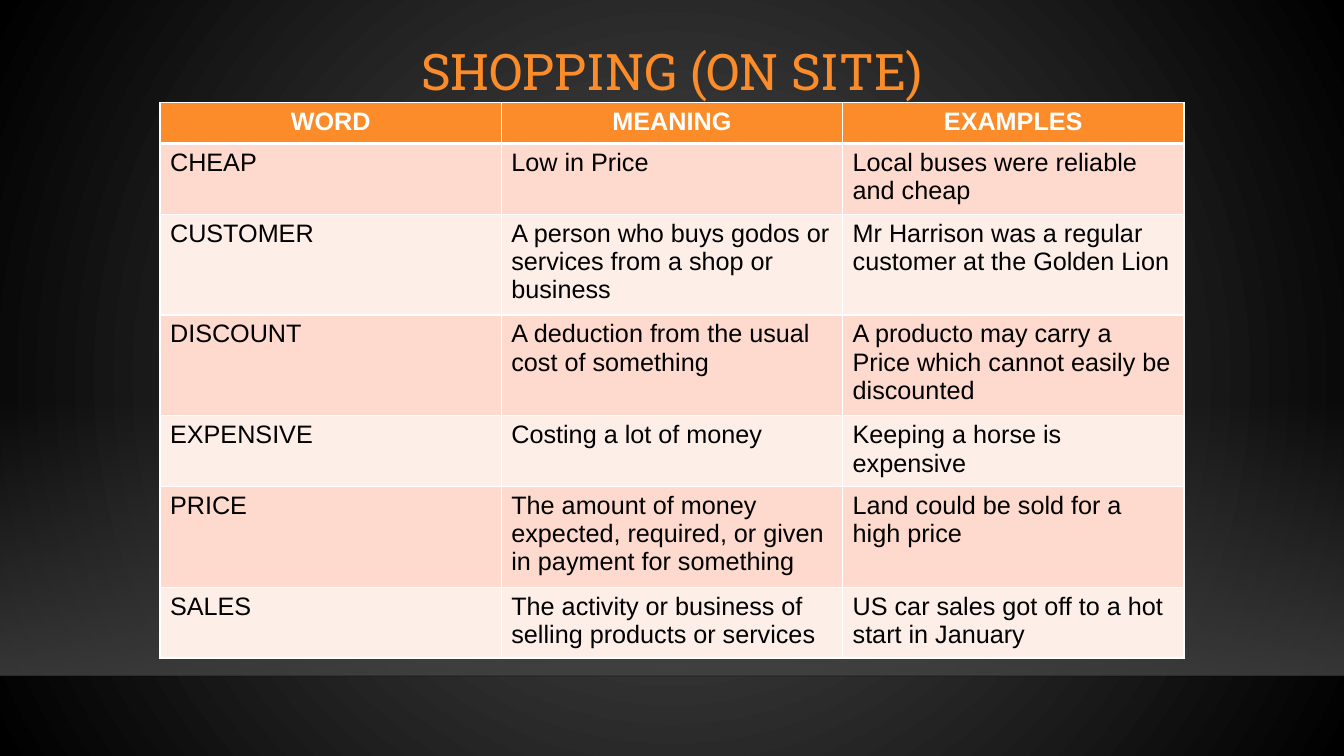
from dataclasses import dataclass

from lxml import etree
from pptx import Presentation
from pptx.dml.color import RGBColor
from pptx.enum.shapes import MSO_CONNECTOR, MSO_SHAPE
from pptx.enum.text import MSO_ANCHOR, PP_ALIGN
from pptx.oxml import parse_xml
from pptx.oxml.ns import nsdecls, qn
from pptx.util import Inches, Pt

LEFT, CENTER = PP_ALIGN.LEFT, PP_ALIGN.CENTER
MIDDLE = MSO_ANCHOR.MIDDLE
RECTANGLE = MSO_SHAPE.RECTANGLE
STRAIGHT = MSO_CONNECTOR.STRAIGHT

SLIDE_W, SLIDE_H = Inches(13.333), Inches(7.5)
COLUMNS, ROWS = 84, 100
CONTENT_COL, CONTENT_SPAN = 10, 64
FLOOR_ROW = 89.4


@dataclass(frozen=True)
class Theme:
    accent: str = "FB8C29"
    white: str = "FFFFFF"
    black: str = "000000"
    glow: str = "505050"
    floor: str = "454545"
    floor_edge: str = "000001"
    bands: tuple = ("FDDACD", "FEEEE8")
    title_font: str = "Roboto Slab"
    body_font: str = "Arial"
    title_size: int = 36
    body_size: int = 18


THEME = Theme()

HEADINGS = ("WORD", "MEANING", "EXAMPLES")
VOCABULARY = (
    ("CHEAP", "Low in Price", "Local buses were reliable and cheap"),
    ("CUSTOMER", "A person who buys godos or services from a shop or business",
     "Mr Harrison was a regular customer at the Golden Lion"),
    ("DISCOUNT", "A deduction from the usual cost of something",
     "A producto may carry a Price which cannot easily be discounted"),
    ("EXPENSIVE", "Costing a lot of money", "Keeping a horse is expensive"),
    ("PRICE", "The amount of money expected, required, or given in payment for something",
     "Land could be sold for a high price"),
    ("SALES", "The activity or business of selling products or services",
     "US car sales got off to a hot start in January"),
)


def col(count):
    return round(SLIDE_W * count / COLUMNS)


def row(count):
    return round(SLIDE_H * count / ROWS)


def write(frame, text, *, font=THEME.body_font, size=THEME.body_size,
          color=THEME.black, bold=False, align=LEFT, line_spacing=None):
    paragraph = frame.paragraphs[0]
    paragraph.alignment = align
    paragraph.line_spacing = line_spacing
    run = paragraph.add_run()
    run.text = text
    run.font.name = font
    run.font.size = Pt(size)
    run.font.bold = bold
    run.font.color.rgb = RGBColor.from_string(color)


def gradient(stops, direction):
    """Build a gradient fill from (percent, colour, opacity percent) stops."""
    stop_xml = "".join(
        f'<a:gs pos="{position * 1000}"><a:srgbClr val="{color}">'
        f'<a:alpha val="{opacity * 1000}"/></a:srgbClr></a:gs>'
        for position, color, opacity in stops)
    return parse_xml(f'<a:gradFill {nsdecls("a")} rotWithShape="1">'
                     f"<a:gsLst>{stop_xml}</a:gsLst>{direction}</a:gradFill>")


def replace_solid_fill(properties, fill):
    properties.replace(properties.find(qn("a:solidFill")), fill)


def paint_background(slide):
    slide.background.fill.solid()
    slide.background.fill.fore_color.rgb = RGBColor.from_string(THEME.black)
    properties = slide.element.find(".//" + qn("p:bgPr"))
    circle = ('<a:path path="circle">'
              '<a:fillToRect l="50000" t="50000" r="50000" b="50000"/></a:path>')
    replace_solid_fill(properties, gradient(
        ((0, THEME.glow, 100), (100, THEME.black, 100)), circle))


def add_floor(slide):
    """Draw the band that brightens downwards and the faint edge under it."""
    top = 52.8
    band = slide.shapes.add_shape(RECTANGLE, 0, row(top), SLIDE_W, row(FLOOR_ROW - top))
    band.shadow.inherit = False
    band.line.fill.background()
    band.fill.solid()
    replace_solid_fill(band.element.spPr, gradient(
        ((0, THEME.floor, 0), (100, THEME.floor, 80)),
        '<a:lin ang="5400000" scaled="0"/>'))

    edge = slide.shapes.add_connector(STRAIGHT, 0, row(FLOOR_ROW), SLIDE_W, row(FLOOR_ROW))
    edge.line.width = Pt(1)
    edge.line.color.rgb = RGBColor.from_string(THEME.floor_edge)
    properties = edge.element.spPr
    color = properties.find(".//" + qn("a:srgbClr"))
    etree.SubElement(color, qn("a:alpha"), val="20000")
    etree.SubElement(properties, qn("a:effectLst"))


def add_title(slide, text):
    title = slide.shapes.add_textbox(col(CONTENT_COL), row(2.13),
                                     col(CONTENT_SPAN), row(15.33))
    frame = title.text_frame
    frame.word_wrap = True
    frame.vertical_anchor = MIDDLE
    write(frame, text, font=THEME.title_font, size=THEME.title_size,
          color=THEME.accent, align=CENTER, line_spacing=0.9)


def set_borders(cell, bottom):
    widths = {"lnL": 1, "lnR": 1, "lnT": 1, "lnB": bottom}
    properties = cell._tc.get_or_add_tcPr()
    for index, (side, width) in enumerate(widths.items()):
        properties.insert(index, parse_xml(
            f'<a:{side} {nsdecls("a")} w="{Pt(width)}"><a:solidFill>'
            f'<a:srgbClr val="{THEME.white}"/></a:solidFill></a:{side}>'))


def fill_cell(cell, text, fill, bottom=1, **text_format):
    cell.fill.solid()
    cell.fill.fore_color.rgb = RGBColor.from_string(fill)
    set_borders(cell, bottom)
    write(cell.text_frame, text, **text_format)


def add_vocabulary(slide):
    row_count = len(VOCABULARY) + 1
    row_height = row(5.4)
    table = slide.shapes.add_table(row_count, len(HEADINGS), col(CONTENT_COL), row(13.6),
                                   col(CONTENT_SPAN), row_height * row_count).table
    table.horz_banding = False
    for table_row in table.rows:
        table_row.height = row_height
    for column, heading in enumerate(HEADINGS):
        fill_cell(table.cell(0, column), heading, THEME.accent, bottom=3,
                  color=THEME.white, bold=True, align=CENTER)
    for index, entry in enumerate(VOCABULARY):
        for column, text in enumerate(entry):
            fill_cell(table.cell(index + 1, column), text,
                      THEME.bands[index % len(THEME.bands)])


def main():
    deck = Presentation()
    deck.slide_width, deck.slide_height = SLIDE_W, SLIDE_H
    slide = deck.slides.add_slide(deck.slide_layouts[6])
    paint_background(slide)
    add_floor(slide)
    add_title(slide, "SHOPPING (ON SITE)")
    add_vocabulary(slide)
    deck.save("out.pptx")


if __name__ == "__main__":
    main()
